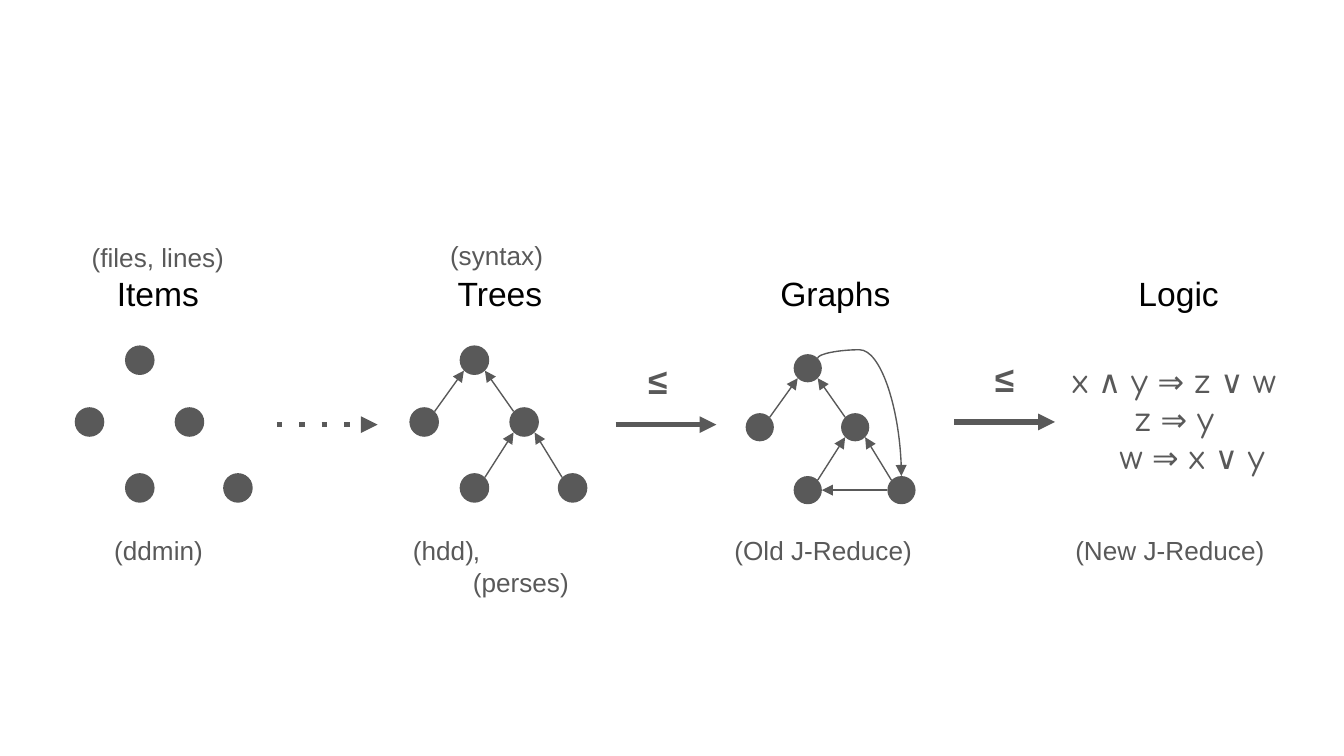
from lxml import etree
from pptx import Presentation
from pptx.dml.color import RGBColor
from pptx.enum.shapes import MSO_CONNECTOR, MSO_SHAPE
from pptx.enum.text import MSO_ANCHOR, PP_ALIGN
from pptx.oxml.ns import qn
from pptx.util import Inches, Pt

STRAIGHT, CURVE = MSO_CONNECTOR.STRAIGHT, MSO_CONNECTOR.CURVE
OVAL = MSO_SHAPE.OVAL
TOP, MIDDLE, BOTTOM = MSO_ANCHOR.TOP, MSO_ANCHOR.MIDDLE, MSO_ANCHOR.BOTTOM
LEFT, CENTER = PP_ALIGN.LEFT, PP_ALIGN.CENTER
GREY, BLACK = "595959", "000000"
HEAD_Y, FOOT_Y = 1.93, 3.88
HEAD_H, FOOT_H = 0.5, 0.43

HEADINGS = [
    (0.38, 1.59, [("(files, lines)", 14, GREY), ("Items", 18, BLACK)]),
    (2.86, 1.72, [("Trees", 18, BLACK)]),
    (5.42, 1.59, [("Graphs", 18, BLACK)]),
    (7.89, 1.76, [("Logic", 18, BLACK)]),
]
TOOLS = [
    (0.7, 0.96, "(ddmin)", CENTER),
    (2.97, 0.66, "(hdd)", CENTER),
    (3.42, 1.0, ", (perses)", LEFT),
    (5.33, 1.59, "(Old J-Reduce)", CENTER),
    (7.89, 1.63, "(New J-Reduce)", CENTER),
]
STEPS = [(2.06, 3.16, "dot"), (4.58, 3.16, "solid"), (7.1, 3.14, "solid")]
SIGNS = [(4.54, 2.57), (7.12, 2.56)]
STEP_W = 0.75
FORMULAS = [("x ∧ y ⇒ z ∨ w", 0), ("z ⇒ y", 0), ("w ⇒ x ∨ y", 0.27)]

NODES = [(0, 0), (-1.7, 2.09), (1.68, 2.09), (0, 4.32), (3.32, 4.32)]
TREE_EDGES = [(1, 0), (2, 0), (3, 2), (4, 2)]
DIAGRAMS = [
    (1.04, 2.68, 0.22, []),
    (3.53, 2.68, 0.22, TREE_EDGES),
    (6.01, 2.74, 0.21, TREE_EDGES + [(4, 3)]),
]


def rgb(color):
    return RGBColor.from_string(color)


def add_text(s, box, paragraphs, size=14, color=GREY, font="Arial", bold=False,
             align=CENTER, anchor=TOP):
    tf = s.shapes.add_textbox(*map(Inches, box)).text_frame
    tf.word_wrap = True
    tf.vertical_anchor = anchor
    tf.margin_left = tf.margin_right = tf.margin_top = tf.margin_bottom = Inches(0.1)
    for i, lines in enumerate(paragraphs):
        p = tf.paragraphs[0] if i == 0 else tf.add_paragraph()
        p.alignment = align
        if isinstance(lines, str):
            lines = [(lines, size, color)]
        for j, (text, line_size, line_color) in enumerate(lines):
            if j:
                p.add_line_break()
            r = p.add_run()
            r.text = text
            r.font.name, r.font.size, r.font.bold = font, Pt(line_size), bold
            r.font.color.rgb = rgb(line_color)
    return tf


def add_arrow(s, start, end, width=0.75, dash="solid", kind=STRAIGHT):
    cn = s.shapes.add_connector(kind, *map(Inches, (*start, *end)))
    cn.line.color.rgb = rgb(GREY)
    cn.line.width = Pt(width)
    ln = cn.line._get_or_add_ln()
    etree.SubElement(ln, qn("a:prstDash"), val=dash)
    etree.SubElement(ln, qn("a:tailEnd"), type="triangle")
    etree.SubElement(cn._element.spPr, qn("a:effectLst"))
    return cn


def sign(v):
    return (v > 0.001) - (v < -0.001)


def rim(node, dx, dy, d):
    k = d / 2 * (0.71 if dx and dy else 1)
    return node[0] + dx * k, node[1] + dy * k


def add_diagram(s, x, y, d, edges):
    nodes = [(x + u * d, y + v * d) for u, v in NODES]
    for cx, cy in nodes:
        sp = s.shapes.add_shape(OVAL, *map(Inches, (cx - d / 2, cy - d / 2, d, d)))
        sp.shadow.inherit = False
        sp.fill.solid()
        sp.fill.fore_color.rgb = rgb(GREY)
        sp.line.fill.background()
    for a, b in edges:
        dx, dy = (sign(q - p) for p, q in zip(nodes[a], nodes[b]))
        add_arrow(s, rim(nodes[a], dx, dy, d), rim(nodes[b], -dx, -dy, d))
    return nodes


def add_back_edge(s, root, leaf, d):
    (x1, y1), (x2, y2) = rim(root, 1, -1, d), rim(leaf, 0, -1, d)
    cx, cy, w, h = (x1 + x2) / 2, (y1 + y2) / 2, x2 - x1, y2 - y1
    cn = add_arrow(s, (cx - h / 2, cy - w / 2), (cx + h / 2, cy + w / 2), kind=CURVE)
    xfrm = cn._element.spPr.find(qn("a:xfrm"))
    xfrm.set("rot", str(270 * 60000))
    xfrm.set("flipH", "1")
    av = cn._element.spPr.find(qn("a:prstGeom")).find(qn("a:avLst"))
    etree.SubElement(av, qn("a:gd"), name="adj1", fmla="val -7200")


def main():
    prs = Presentation()
    prs.slide_width = Inches(10)
    prs.slide_height = prs.slide_width * 9 // 16
    s = prs.slides.add_slide(prs.slide_layouts[6])

    for x, w, lines in HEADINGS:
        add_text(s, (x, HEAD_Y, w, HEAD_H), [lines], anchor=BOTTOM)
    add_text(s, (3, 1.73, 1.39, 0.33), ["(syntax)"], anchor=MIDDLE)
    for x, w, text, align in TOOLS:
        add_text(s, (x, FOOT_Y, w, FOOT_H), [text], align=align)

    for x, y, d, edges in DIAGRAMS:
        nodes = add_diagram(s, x, y, d, edges)
    add_back_edge(s, nodes[0], nodes[-1], d)

    for x, y, dash in STEPS:
        add_arrow(s, (x, y), (x + STEP_W, y), width=3, dash=dash)
    for x, y in SIGNS:
        add_text(s, (x, y, 0.71, 0.5), ["≤"], size=19, bold=True)

    tf = add_text(s, (7.85, 2.59, 1.77, 1.12), [text for text, _ in FORMULAS],
                  size=17, font="Comfortaa")
    for p, (_, indent) in zip(tf.paragraphs, FORMULAS):
        p._p.get_or_add_pPr().set("marL", str(Inches(indent)))

    prs.save("out.pptx")


if __name__ == "__main__":
    main()
